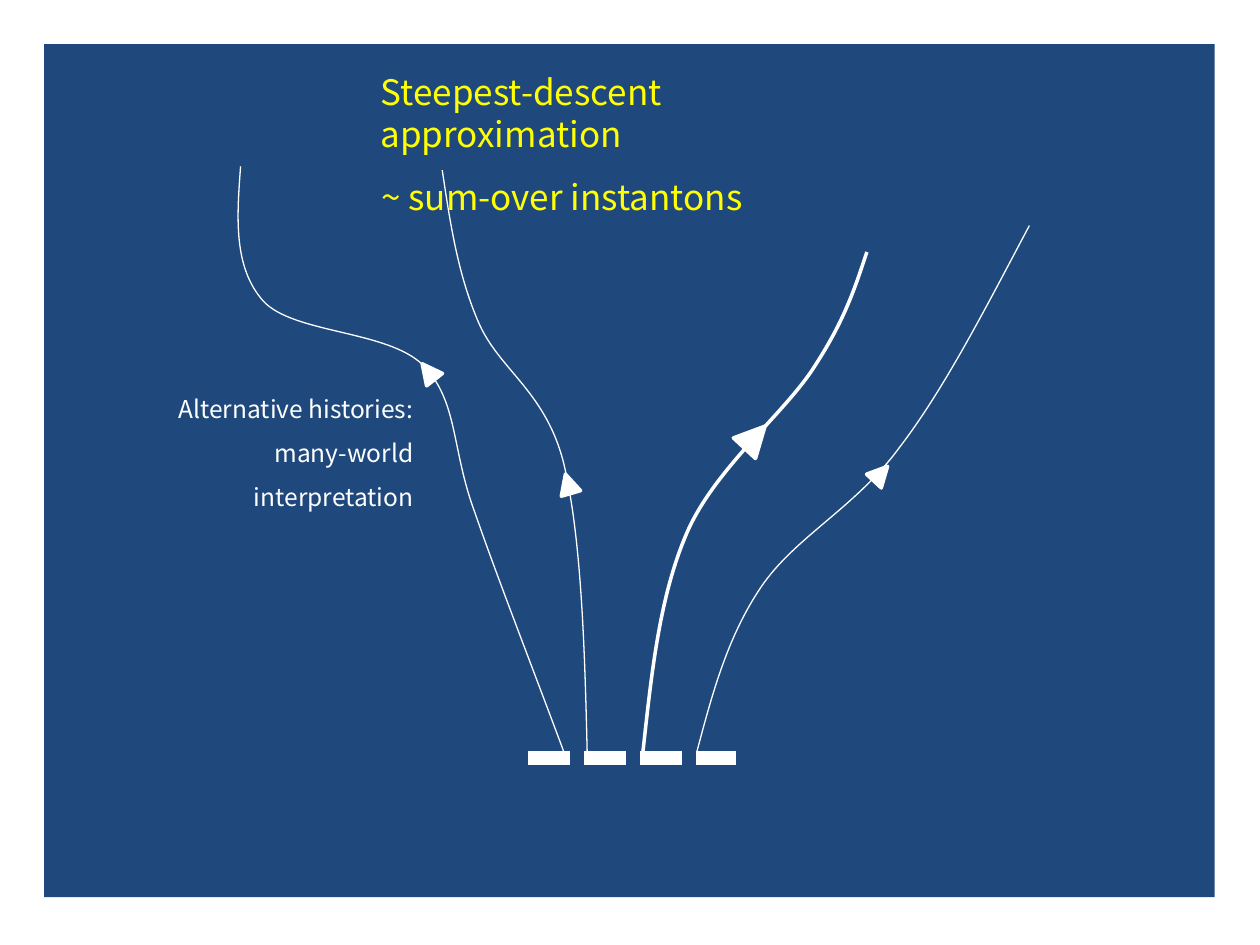
from lxml import etree
from pptx import Presentation
from pptx.dml.color import RGBColor
from pptx.enum.dml import MSO_LINE
from pptx.enum.shapes import MSO_CONNECTOR, MSO_SHAPE
from pptx.enum.text import MSO_ANCHOR, MSO_AUTO_SIZE, PP_ALIGN
from pptx.oxml.ns import qn
from pptx.util import Inches, Pt

COLORS = {"panel": "1F497D", "ink": "FFFFFF", "title": "FFFF00"}
FONT = "Noto Sans CJK KR"

# Cubic curves as offsets from the start: two handles and an end per segment.
HISTORIES = [
    {"start": (5.1, 5.99), "width": 2,
     "curve": [(.07, -.63), (.13, -1.26), (.36, -1.78),
               (.59, -2.29), (1.14, -2.72), (1.37, -3.09),
               (1.61, -3.46), (1.69, -3.72), (1.78, -3.99)],
     "head": (.89, -2.52), "size": .24, "angle": 43},
    {"start": (4.66, 5.96), "width": .75,
     "curve": [(-.02, -.87), (-.05, -1.73), (-.19, -2.3),
               (-.34, -2.87), (-.71, -3.03), (-.87, -3.42),
               (-1.03, -3.8), (-1.09, -4.21), (-1.15, -4.61)],
     "head": (-.15, -2.12), "size": .16, "angle": 344},
    {"start": (5.53, 5.97), "width": .75,
     "curve": [(.12, -.45), (.24, -.91), (.51, -1.31),
               (.78, -1.71), (1.26, -1.94), (1.61, -2.42),
               (1.97, -2.89), (2.3, -3.54), (2.64, -4.18)],
     "head": (1.46, -2.21), "size": .16, "angle": 43},
    {"start": (4.48, 5.98), "width": .75,
     "curve": [(-.26, -.7), (-.53, -1.39), (-.71, -1.91),
               (-.9, -2.42), (-.84, -2.79), (-1.12, -3.08),
               (-1.4, -3.36), (-2.15, -3.33), (-2.39, -3.59),
               (-2.63, -3.86), (-2.6, -4.26), (-2.57, -4.66)],
     "head": (-1.08, -3.03), "size": .16, "angle": 322},
]


def rgb(name):
    return RGBColor.from_string(COLORS[name])


def set_line(sp, width):
    sp.line.color.rgb = rgb("ink")
    sp.line.width = Pt(width)


def add_filled(s, preset, box, color):
    sp = s.shapes.add_shape(preset, *map(Inches, box))
    sp.shadow.inherit = False
    sp.fill.solid()
    sp.fill.fore_color.rgb = rgb(color)
    sp.line.fill.background()
    return sp


def bend(sp):
    """Turn each three straight segments of a freeform into one cubic curve."""
    lines = list(sp._element.iter(qn("a:lnTo")))
    for i in range(0, len(lines), 3):
        lines[i].tag = qn("a:cubicBezTo")
        for extra in lines[i + 1:i + 3]:
            lines[i].append(extra[0])
            extra.getparent().remove(extra)


def add_history(s, start, curve, width, head, size, angle):
    x, y = start
    builder = s.shapes.build_freeform(Inches(x), Inches(y))
    builder.add_line_segments(
        [(Inches(x + dx), Inches(y + dy)) for dx, dy in curve], close=False)
    path = builder.convert_to_shape()
    bend(path)
    path.shadow.inherit = False
    path.fill.background()
    set_line(path, width)

    box = (x + head[0] - size / 2, y + head[1] - size / 2, size, size)
    arrow = add_filled(s, MSO_SHAPE.ISOSCELES_TRIANGLE, box, "ink")
    arrow.rotation = angle
    set_line(arrow, 2)


def add_slit_screen(s, left, top, width):
    screen = s.shapes.add_connector(
        MSO_CONNECTOR.STRAIGHT, *map(Inches, (left, top, left + width, top)))
    set_line(screen, 8)
    screen.line.dash_style = MSO_LINE.SQUARE_DOT
    etree.SubElement(screen._element.spPr, qn("a:effectLst"))


def write_text(sp, box, paragraphs, size, color):
    """Move a text shape to box and fill it with (text, align, spacing) rows."""
    sp.left, sp.top, sp.width, sp.height = map(Inches, box)
    tf = sp.text_frame
    frame = {"word_wrap": True, "auto_size": MSO_AUTO_SIZE.NONE,
             "vertical_anchor": MSO_ANCHOR.TOP}
    for name, value in frame.items():
        setattr(tf, name, value)
    for i, (text, align, spacing) in enumerate(paragraphs):
        p = tf.add_paragraph() if i else tf.paragraphs[0]
        p.alignment, p.line_spacing = align, spacing
        r = p.add_run()
        r.text = text
        for name, value in {"name": FONT, "size": Pt(size)}.items():
            setattr(r.font, name, value)
        r.font.color.rgb = rgb(color)


def main():
    prs = Presentation()
    prs.slide_width, prs.slide_height = Inches(10), Inches(7.5)
    s = prs.slides.add_slide(prs.slide_layouts[5])

    add_filled(s, MSO_SHAPE.RECTANGLE, (.35, .35, 9.29, 6.77), "panel")
    add_slit_screen(s, 4.19, 6.02, 1.65)
    for history in HISTORIES:
        add_history(s, **history)

    title = s.shapes.title
    s.shapes._spTree.append(title._element)  # bring in front of the panel
    write_text(title, (2.92, .51, 3.08, 1.3),
               [("Steepest-descent approximation", PP_ALIGN.LEFT, 1.0),
                ("~ sum-over instantons", PP_ALIGN.CENTER, 1.5)], 20, "title")
    write_text(s.shapes.add_textbox(0, 0, 0, 0), (1.27, 2.96, 2.11, 1.15),
               [("Alternative histories:", PP_ALIGN.RIGHT, 1.5),
                ("many-world interpretation", PP_ALIGN.RIGHT, 1.5)], 14, "ink")
    prs.save("out.pptx")


if __name__ == "__main__":
    main()
